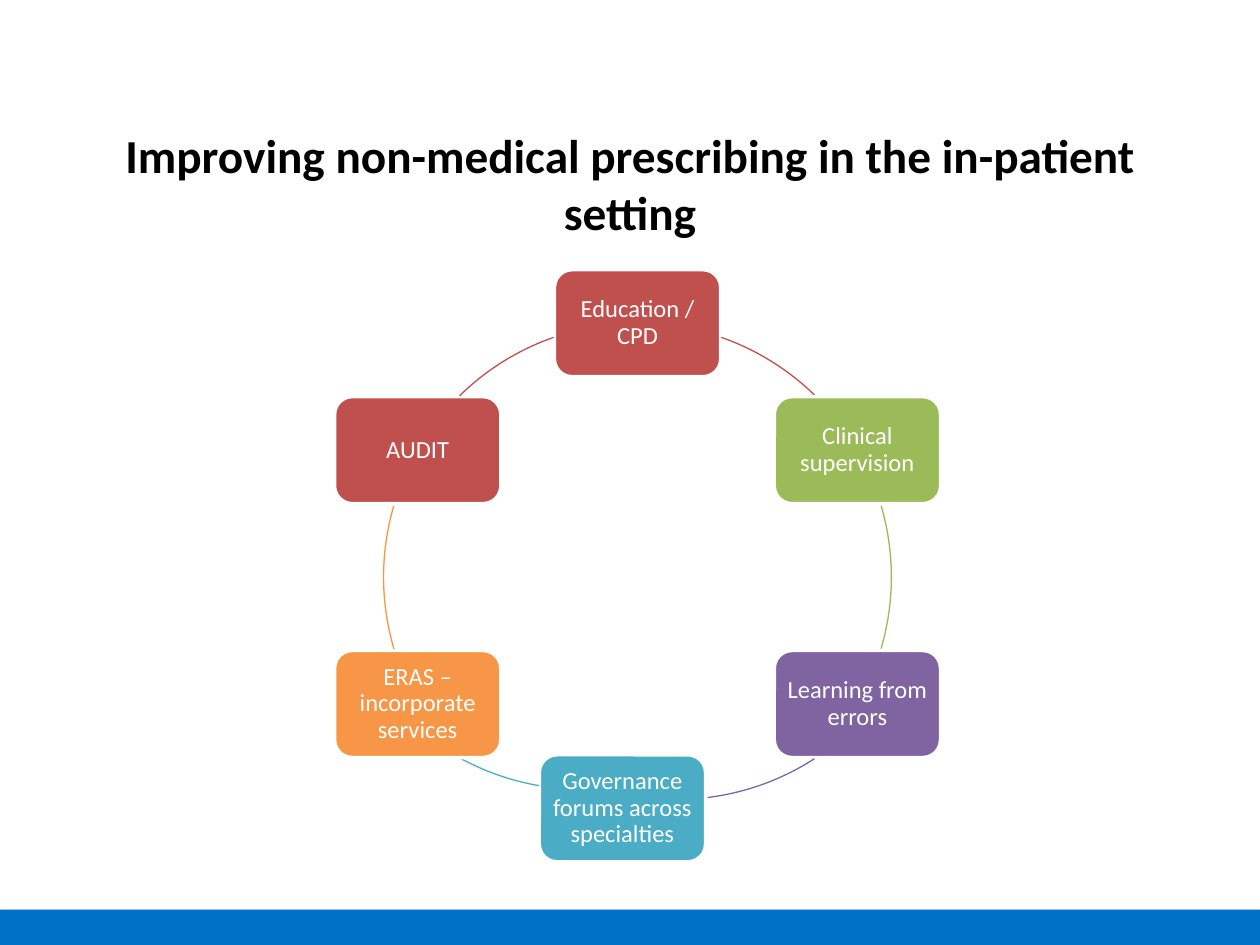
from math import cos, radians, sin

from lxml.etree import SubElement
from pptx import Presentation
from pptx.dml.color import RGBColor
from pptx.enum.shapes import MSO_SHAPE
from pptx.enum.text import MSO_ANCHOR, PP_ALIGN
from pptx.oxml.ns import qn
from pptx.util import Inches, Pt

TITLE = "Improving non-medical prescribing in the in-patient setting"
FONT = "Calibri"
CENTER = (5.06, 4.58)
RADIUS = 2.015
BOX_WIDTH, BOX_HEIGHT = 1.32, 0.85

# Label, colour, nudge of the box, then start, end and nudge of the arc after it
STEPS = [
    ("Education / CPD", "C0504D", (0, 0), (289.3, 314.4), (0, 0)),
    ("Clinical supervision", "9BBB59", (0, 0), (343.7, 16.5), (0, 0)),
    ("Learning from errors", "8064A2", (0, 0), (57.1, 83), (0.31, -0.25)),
    ("Governance forums across specialties", "4BACC6", (-0.12, -0.18),
     (99.8, 118.8), (-0.44, -0.33)),
    ("ERAS – incorporate services", "F79646", (0, 0), (163.5, 196.3), (0, 0)),
    ("AUDIT", "C0504D", (0, 0), (225.5, 250.7), (0, 0)),
]


def color(value):
    return RGBColor.from_string(value)


def write(shape, text, size=14, fill="FFFFFF", bold=False, inset=0.1, spacing=None):
    frame = shape.text_frame
    frame.word_wrap = True
    frame.vertical_anchor = MSO_ANCHOR.MIDDLE
    frame.margin_left = frame.margin_right = Inches(inset)
    frame.margin_top = frame.margin_bottom = Inches(inset)
    paragraph = frame.paragraphs[0]
    paragraph.alignment = PP_ALIGN.CENTER
    paragraph.line_spacing = spacing
    run = paragraph.add_run()
    run.text = text
    run.font.name = FONT
    run.font.size = Pt(size)
    run.font.bold = bold
    run.font.color.rgb = color(fill)


def add_shape(slide, kind, left, top, width, height, fill=None, line=None, weight=0.75):
    shape = slide.shapes.add_shape(
        kind, Inches(left), Inches(top), Inches(width), Inches(height))
    shape.shadow.inherit = False
    if fill:
        shape.fill.solid()
        shape.fill.fore_color.rgb = color(fill)
    else:
        shape.fill.background()
    if line:
        shape.line.color.rgb = color(line)
        shape.line.width = Pt(weight)
    else:
        shape.line.fill.background()
    return shape


def add_shadow(shape):
    effects = shape._element.spPr.find(qn("a:effectLst"))
    shadow = SubElement(effects, qn("a:outerShdw"), blurRad=str(Pt(3.1)),
                        dist=str(Pt(1.8)), dir="5400000", rotWithShape="0")
    black = SubElement(shadow, qn("a:srgbClr"), val="000000")
    SubElement(black, qn("a:alpha"), val="35000")


def main():
    presentation = Presentation()
    presentation.slide_width = Inches(10)
    presentation.slide_height = Inches(7.5)
    slide = presentation.slides.add_slide(presentation.slide_layouts[6])

    # Footer band and title
    add_shadow(add_shape(slide, MSO_SHAPE.RECTANGLE, 0, 7.22, 10, 0.28, "0072C6"))
    title = slide.shapes.add_textbox(Inches(0.5), Inches(1.17), Inches(9), Inches(0.57))
    write(title, TITLE, size=27, fill="000000", bold=True)

    # Cycle: boxes clockwise from the top, each followed by its arc
    center_x, center_y = CENTER
    for index, (label, fill, box_nudge, angles, arc_nudge) in enumerate(STEPS):
        angle = radians(index * 360 / len(STEPS) - 90)
        left = center_x + RADIUS * cos(angle) - BOX_WIDTH / 2 + box_nudge[0]
        top = center_y + RADIUS * sin(angle) - BOX_HEIGHT / 2 + box_nudge[1]
        box = add_shape(slide, MSO_SHAPE.ROUNDED_RECTANGLE, left, top,
                        BOX_WIDTH, BOX_HEIGHT, fill, "FFFFFF", 2)
        write(box, label, inset=0.06, spacing=0.9)

        arc = add_shape(slide, MSO_SHAPE.ARC, center_x - RADIUS + arc_nudge[0],
                        center_y - RADIUS + arc_nudge[1],
                        2 * RADIUS, 2 * RADIUS, line=fill)
        for position, degrees in enumerate(angles):
            arc.adjustments[position] = degrees * 0.6  # 60000ths of a degree

    presentation.save("out.pptx")


if __name__ == "__main__":
    main()
